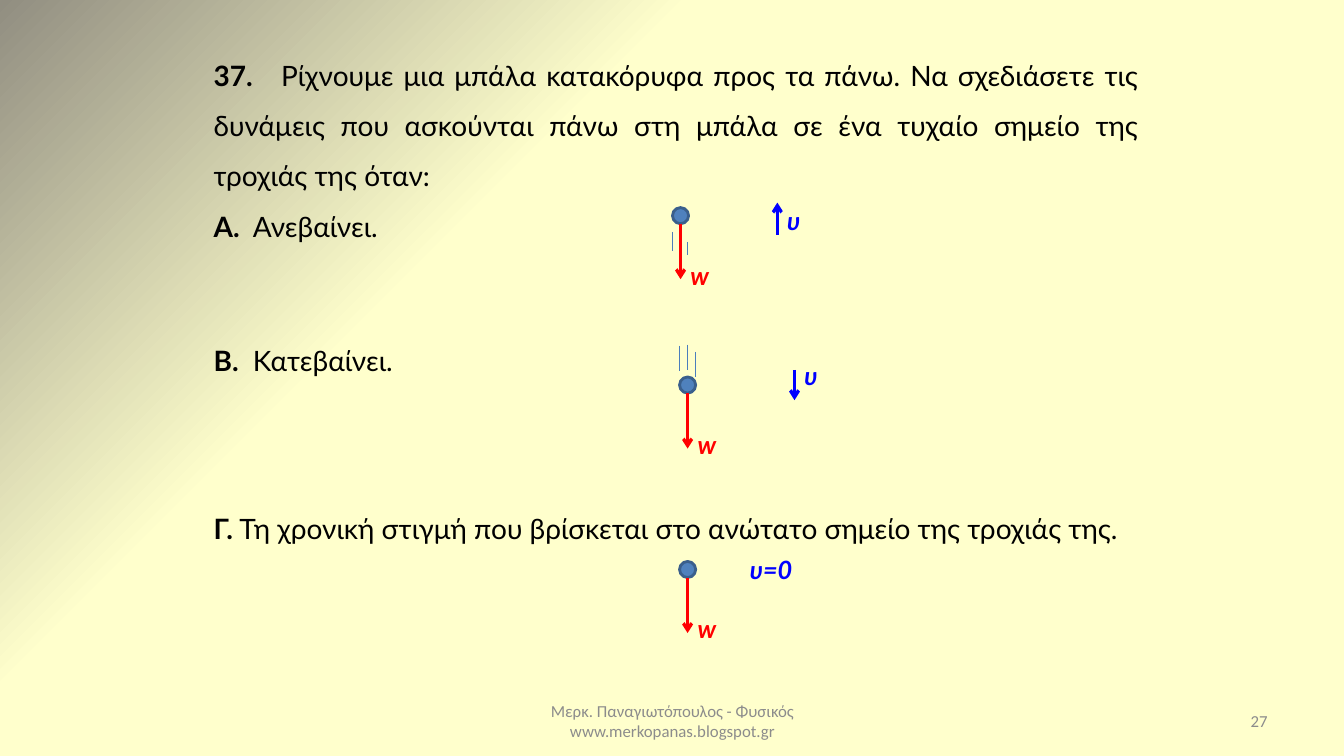
from lxml import etree
from pptx import Presentation
from pptx.dml.color import RGBColor
from pptx.enum.shapes import MSO_CONNECTOR, MSO_SHAPE
from pptx.enum.text import MSO_ANCHOR, PP_ALIGN
from pptx.oxml import parse_xml
from pptx.oxml.ns import nsdecls, qn
from pptx.util import Inches, Pt

STRAIGHT = MSO_CONNECTOR.STRAIGHT
OVAL = MSO_SHAPE.OVAL
TOP, MIDDLE = MSO_ANCHOR.TOP, MSO_ANCHOR.MIDDLE
LEFT, CENTER, RIGHT = PP_ALIGN.LEFT, PP_ALIGN.CENTER, PP_ALIGN.RIGHT
JUSTIFY = PP_ALIGN.JUSTIFY


def rgb(color):
    return RGBColor.from_string(color)


class Builder:
    FONT = "Lato"
    FOOTER_FONT = "Calibri"
    BLACK, GREY = "000000", "8C8C8C"
    WEIGHT, VELOCITY = "FF0000", "0000FF"
    BALL, BALL_EDGE, STREAK = "4F81BD", "3A5F8C", "4B7EBC"
    BALL_SIZE = 0.16

    def __init__(self, s):
        self.s = s

    def background(self, inner, outer):
        """Circular gradient that spreads from the bottom right corner."""
        bg_pr = parse_xml(
            f'<p:bg {nsdecls("p", "a")}><p:bgPr><a:gradFill rotWithShape="1"><a:gsLst>'
            f'<a:gs pos="0"><a:srgbClr val="{inner}"/></a:gs>'
            f'<a:gs pos="67000"><a:srgbClr val="{inner}"/></a:gs>'
            f'<a:gs pos="100000"><a:srgbClr val="{outer}"/></a:gs></a:gsLst>'
            '<a:path path="circle"><a:fillToRect l="100000" t="100000"/></a:path>'
            '</a:gradFill><a:effectLst/></p:bgPr></p:bg>')
        self.s.element.cSld.insert(0, bg_pr)

    def run(self, p, text, size, color, font=FONT, bold=False, italic=False):
        r = p.add_run()
        r.text = text
        r.font.name, r.font.size = font, Pt(size)
        r.font.bold, r.font.italic = bold, italic
        r.font.color.rgb = rgb(color)

    def text_box(self, shapes, x, y, w, h, align=LEFT, anchor=TOP):
        """Add an empty text box; return its frame and first paragraph."""
        sp = shapes.add_textbox(Inches(x), Inches(y), Inches(w), Inches(h))
        tf = sp.text_frame
        tf.word_wrap, tf.vertical_anchor = True, anchor
        tf.paragraphs[0].alignment = align
        return tf, tf.paragraphs[0]

    def footer(self, x, w, text, align):
        _, p = self.text_box(self.s.shapes, x, 6.95, w, 0.4, align, MIDDLE)
        self.run(p, text, 12, self.GREY, self.FOOTER_FONT)

    def label(self, shapes, x, y, w, text, color):
        _, p = self.text_box(shapes, x, y, w, 0.4)
        self.run(p, text, 18, color, bold=True, italic=True)

    def exercise(self, items):
        """Items: number, text, tab position, line spacing, points before."""
        tf, p = self.text_box(self.s.shapes, 2.02, 0.36, 9.37, 5.15)
        for i, (number, text, tab, spacing, before) in enumerate(items):
            if i:
                p = tf.add_paragraph()
            if tab:
                tabs = etree.SubElement(p._p.get_or_add_pPr(), qn("a:tabLst"))
                etree.SubElement(tabs, qn("a:tab"), pos=str(Inches(tab)), algn="l")
            p.alignment, p.line_spacing, p.space_before = JUSTIFY, spacing, Pt(before)
            self.run(p, number, 20, self.BLACK, bold=True)
            self.run(p, ("\t" if tab else " ") + text, 20, self.BLACK)

    def line(self, shapes, x, y1, y2, color, width, arrow=False):
        """Vertical line from y1 to y2."""
        c = shapes.add_connector(STRAIGHT, Inches(x), Inches(y1), Inches(x), Inches(y2))
        c.line.color.rgb, c.line.width = rgb(color), Pt(width)
        if arrow:
            etree.SubElement(c.line._get_or_add_ln(), qn("a:tailEnd"), type="arrow")
        etree.SubElement(c._element.spPr, qn("a:effectLst"))

    def ball(self, x, y, streaks=()):
        """Ball with its motion streaks and the weight arrow below it."""
        shapes = self.s.shapes.add_group_shape().shapes
        size = Inches(self.BALL_SIZE)
        sp = shapes.add_shape(OVAL, Inches(x), Inches(y), size, size)
        sp.shadow.inherit = False
        sp.fill.solid()
        sp.fill.fore_color.rgb = rgb(self.BALL)
        sp.line.color.rgb, sp.line.width = rgb(self.BALL_EDGE), Pt(2)
        for streak_x, y1, y2 in streaks:
            self.line(shapes, streak_x, y1, y2, self.STREAK, 0.75)
        center, bottom = x + self.BALL_SIZE / 2, y + self.BALL_SIZE
        self.line(shapes, center, bottom, bottom + 0.55, self.WEIGHT, 2.25, True)
        self.label(shapes, center, y + 0.47, 0.39, "w", self.WEIGHT)

    def velocity(self, x, label_y, y1, y2):
        shapes = self.s.shapes.add_group_shape().shapes
        self.label(shapes, x, label_y, 0.33, "υ", self.VELOCITY)
        self.line(shapes, x, y1, y2, self.VELOCITY, 2.25, True)


def main():
    prs = Presentation()
    prs.slide_width, prs.slide_height = Inches(13.33), Inches(7.5)
    b = Builder(prs.slides.add_slide(prs.slide_layouts[6]))
    b.background("FFFFCC", "918E81")
    b.footer(4.56, 4.22, "Μερκ. Παναγιωτόπουλος - Φυσικός www.merkopanas.blogspot.gr", CENTER)
    b.footer(9.56, 3.11, "27", RIGHT)
    b.exercise([
        ("37.", "Ρίχνουμε μια μπάλα κατακόρυφα προς τα πάνω. Να σχεδιάσετε τις "
                "δυνάμεις που ασκούνται πάνω στη μπάλα σε ένα τυχαίο σημείο της "
                "τροχιάς της όταν:", 0.67, 1.5, 0),
        ("Α.", "Ανεβαίνει.", 0.39, 1.5, 0),
        ("Β.", "Κατεβαίνει.", 0.39, 1.0, 72),
        ("Γ.", "Τη χρονική στιγμή που βρίσκεται στο ανώτατο σημείο της τροχιάς της.",
         None, 1.0, 96),
    ])
    b.ball(6.67, 2.06, [(6.67, 2.3, 2.49), (6.75, 2.33, 2.58), (6.82, 2.4, 2.53)])
    b.ball(6.74, 3.74, [(6.82, 3.42, 3.67), (6.74, 3.43, 3.68), (6.9, 3.49, 3.74)])
    b.ball(6.74, 5.57)
    b.velocity(7.71, 1.99, 2.33, 2.01)
    b.velocity(7.88, 3.53, 3.67, 3.97)
    b.label(b.s.shapes, 7.34, 5.45, 0.74, "υ=0", b.VELOCITY)
    prs.save("out.pptx")


if __name__ == "__main__":
    main()
